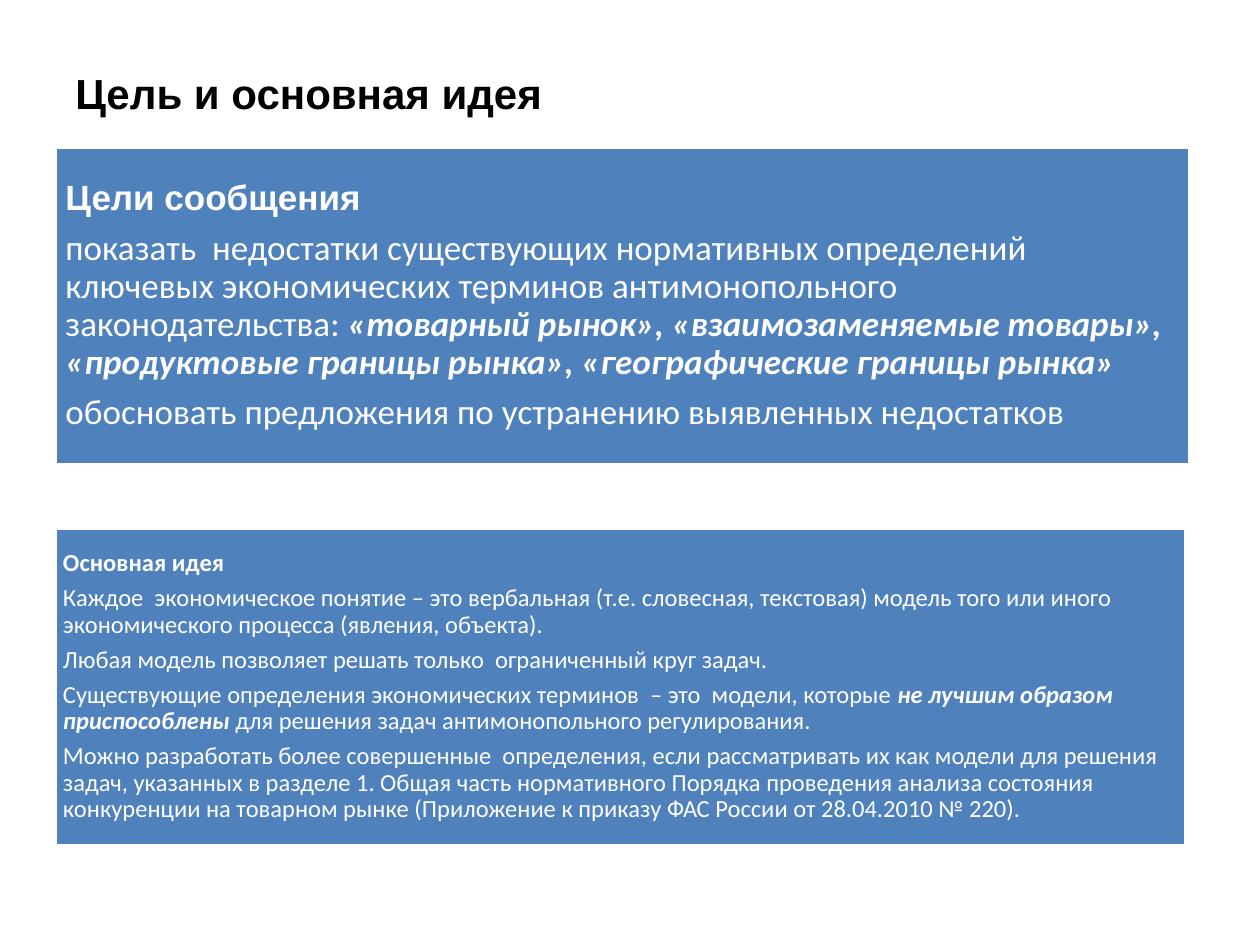
from dataclasses import dataclass

from pptx import Presentation
from pptx.dml.color import RGBColor
from pptx.enum.shapes import MSO_SHAPE
from pptx.enum.text import MSO_ANCHOR, PP_ALIGN
from pptx.util import Inches, Pt

RECTANGLE = MSO_SHAPE.RECTANGLE
MIDDLE = MSO_ANCHOR.MIDDLE
LEFT = PP_ALIGN.LEFT

PLAIN, BOLD, STRONG = (False, False), (True, False), (True, True)


@dataclass(frozen=True)
class Theme:
    ink: RGBColor = RGBColor(0x00, 0x00, 0x00)
    paper: RGBColor = RGBColor(0xFF, 0xFF, 0xFF)
    panel: RGBColor = RGBColor(0x4F, 0x81, 0xBD)
    heading_font: str = "Arial"
    body_font: str = "Calibri"
    title_size: int = 24
    goals_size: int = 20
    idea_size: int = 14
    line_spacing: float = 0.9
    gap_ratio: float = 0.35  # space after a paragraph, as a share of type size


class SlideBuilder:
    def __init__(self, slide, theme):
        self.slide = slide
        self.theme = theme

    def add_span(self, para, text, font, size, color, style):
        span = para.add_run()
        span.text = text
        span.font.name = font
        span.font.size = Pt(size)
        span.font.color.rgb = color
        span.font.bold, span.font.italic = style

    def prepare_frame(self, shape, inset):
        frame = shape.text_frame
        frame.word_wrap = True
        frame.vertical_anchor = MIDDLE
        frame.margin_left = frame.margin_right = Inches(inset)
        frame.margin_top = frame.margin_bottom = Inches(inset)
        return frame

    def add_title(self, text, left, top, width, height):
        box = self.slide.shapes.add_textbox(
            Inches(left), Inches(top), Inches(width), Inches(height))
        para = self.prepare_frame(box, 0.1).paragraphs[0]
        self.add_span(para, text, self.theme.heading_font,
                      self.theme.title_size, self.theme.ink, BOLD)

    def add_panel(self, top, width, inset, size, heading_font, paragraphs):
        """Add a filled panel; its first paragraph is set in heading_font."""
        theme = self.theme
        panel = self.slide.shapes.add_shape(
            RECTANGLE, Inches(0.44), Inches(top), Inches(width), Inches(2.52))
        panel.shadow.inherit = False
        panel.fill.solid()
        panel.fill.fore_color.rgb = theme.panel
        panel.line.color.rgb = theme.paper
        panel.line.width = Pt(2)
        frame = self.prepare_frame(panel, inset)
        for index, spans in enumerate(paragraphs):
            para = frame.add_paragraph() if index else frame.paragraphs[0]
            para.alignment = LEFT
            para.line_spacing = theme.line_spacing
            para.space_after = Pt(size * theme.gap_ratio)
            font = theme.body_font if index else heading_font
            for text, style in spans:
                self.add_span(para, text, font, size, theme.paper, style)


GOALS = [
    [("Цели сообщения", BOLD)],
    [("показать  недостатки существующих нормативных определений ключевых "
      "экономических терминов антимонопольного законодательства: ", PLAIN),
     ("«товарный рынок», «взаимозаменяемые товары», «продуктовые границы "
      "рынка», «географические границы рынка»", STRONG)],
    [("обосновать предложения по устранению выявленных недостатков", PLAIN)],
]

IDEA = [
    [("Основная идея", BOLD)],
    [("Каждое  экономическое понятие – это вербальная (т.е. словесная, "
      "текстовая) модель того или иного экономического процесса "
      "(явления, объекта).", PLAIN)],
    [("Любая модель позволяет решать только  ограниченный круг задач.", PLAIN)],
    [("Существующие определения экономических терминов  – это  модели, "
      "которые ", PLAIN),
     ("не лучшим образом приспособлены", STRONG),
     (" для решения задач антимонопольного регулирования.", PLAIN)],
    [("Можно разработать более совершенные  определения, если рассматривать "
      "их как модели для решения задач, указанных в разделе 1. Общая часть "
      "нормативного Порядка проведения анализа состояния конкуренции на "
      "товарном рынке (Приложение к приказу ФАС России от 28.04.2010 № 220).",
      PLAIN)],
]


def main():
    deck = Presentation()
    deck.slide_width, deck.slide_height = Inches(10), Inches(7.5)
    theme = Theme()
    page = SlideBuilder(deck.slides.add_slide(deck.slide_layouts[6]), theme)
    page.add_title("Цель и основная идея", 0.5, 0.3, 9, 0.87)
    page.add_panel(1.17, 9, 0.08, theme.goals_size, theme.heading_font, GOALS)
    page.add_panel(4.19, 8.97, 0.06, theme.idea_size, theme.body_font, IDEA)
    deck.save("out.pptx")


if __name__ == "__main__":
    main()
